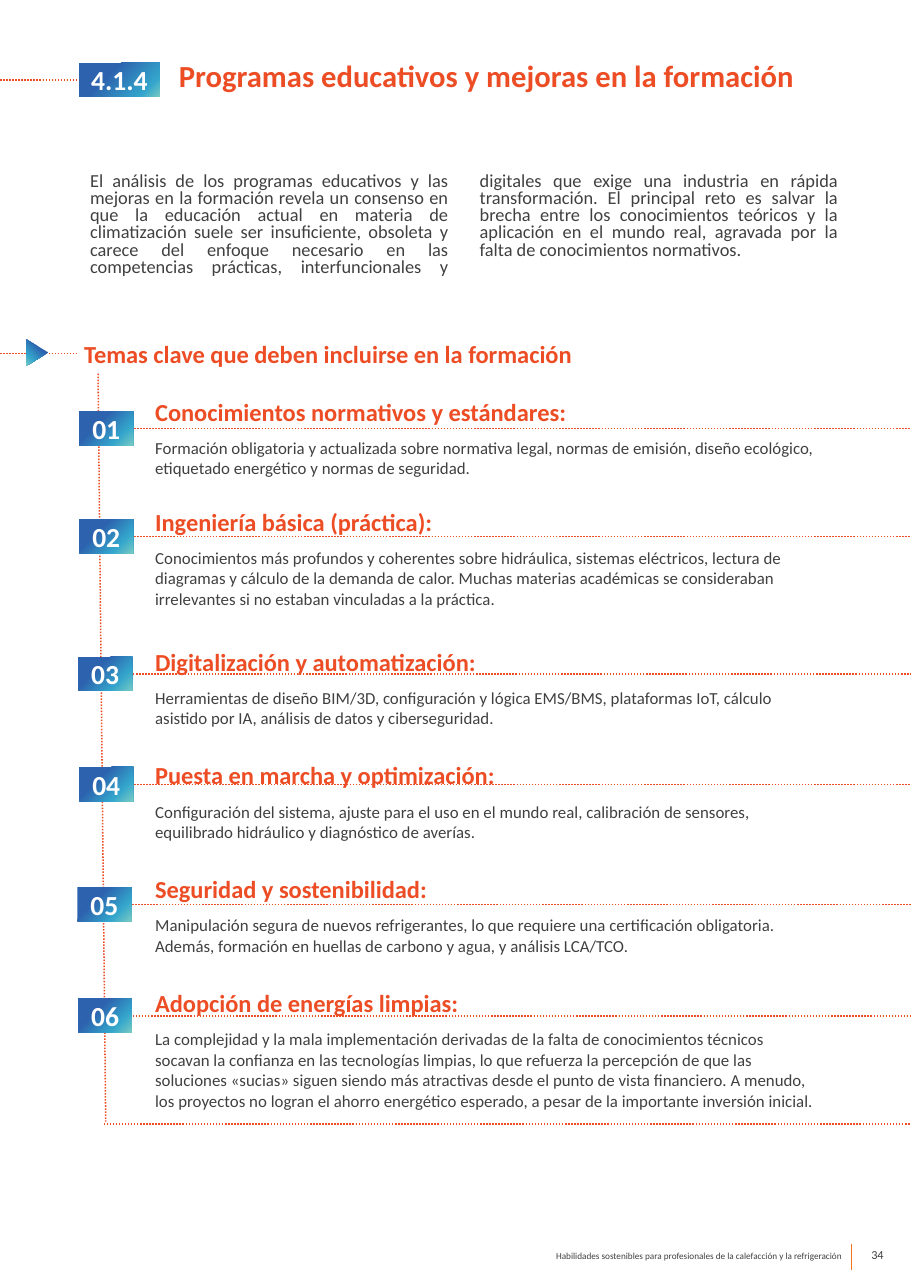
"""Builds the A4 page on training programmes, with six numbered key topics."""
from dataclasses import dataclass

from lxml.etree import SubElement
from pptx import Presentation
from pptx.dml.color import RGBColor
from pptx.enum.dml import MSO_LINE
from pptx.enum.shapes import MSO_CONNECTOR, MSO_SHAPE
from pptx.enum.text import MSO_ANCHOR, PP_ALIGN
from pptx.oxml.ns import qn
from pptx.shapes.autoshape import Shape
from pptx.slide import Slide
from pptx.text.text import TextFrame, _Paragraph
from pptx.util import Pt

PAGE_WIDTH, PAGE_HEIGHT = 595.44, 841.68
FONT = "Calibri"
COLORS = {
    "orange": "ED4D24",
    "footer_rule": "F37321",
    "text": "404040",
    "white": "FFFFFF",
    "blue": "2D62AE",
    "cyan": "33A5CC",
    "aqua": "77CBC4",
}
TOPIC_LINE = 13.4
HEADING_GAP = 7.3
BADGE_HEIGHT = 22.4
BADGE_RULE_OFFSET = 11.4


@dataclass(frozen=True)
class Topic:
    heading: str
    body: str
    rule_y: float
    badge_left: float
    space_before: float


@dataclass(frozen=True)
class Rule:
    start_x: float
    start_y: float
    end_x: float
    end_y: float


@dataclass(frozen=True)
class TextStyle:
    size: float
    color: str
    bold: bool = False
    line_spacing: float | None = None
    align: PP_ALIGN = PP_ALIGN.LEFT


TITLE = TextStyle(20, "orange", True, 21)
SUBTITLE = TextStyle(16, "orange", True, 17)
INTRO = TextStyle(12, "text", False, 11.2, PP_ALIGN.JUSTIFY)
BADGE = TextStyle(18, "white", True, None, PP_ALIGN.CENTER)
HEADING = TextStyle(16, "orange", True, TOPIC_LINE)
BODY = TextStyle(11, "text", False, TOPIC_LINE)
FOOTER = TextStyle(6, "text", align=PP_ALIGN.RIGHT)
PAGE_NUMBER = TextStyle(8, "text", align=PP_ALIGN.RIGHT)

INTRO_TEXT = (
    "El análisis de los programas educativos y las mejoras en la formación revela un "
    "consenso en que la educación actual en materia de climatización suele ser "
    "insuficiente, obsoleta y carece del enfoque necesario en las competencias prácticas, "
    "interfuncionales y digitales que exige una industria en rápida transformación. El "
    "principal reto es salvar la brecha entre los conocimientos teóricos y la aplicación "
    "en el mundo real, agravada por la falta de conocimientos normativos."
)
TOPICS = [
    Topic("Conocimientos normativos y estándares:",
          "Formación obligatoria y actualizada sobre normativa legal, normas de emisión, "
          "diseño ecológico, etiquetado energético y normas de seguridad.",
          280.1, 51.8, 0),
    Topic("Ingeniería básica (práctica):",
          "Conocimientos más profundos y coherentes sobre hidráulica, sistemas eléctricos, "
          "lectura de diagramas y cálculo de la demanda de calor. Muchas materias académicas "
          "se consideraban irrelevantes si no estaban vinculadas a la práctica.",
          350.6, 51.8, 24.4),
    Topic("Digitalización y automatización:",
          "Herramientas de diseño BIM/3D, configuración y lógica EMS/BMS, plataformas IoT, "
          "cálculo asistido por IA, análisis de datos y ciberseguridad.",
          440.6, 51.1, 30.5),
    Topic("Puesta en marcha y optimización:",
          "Configuración del sistema, ajuste para el uso en el mundo real, calibración de "
          "sensores, equilibrado hidráulico y diagnóstico de averías.",
          512.6, 51.8, 26.8),
    Topic("Seguridad y sostenibilidad:",
          "Manipulación segura de nuevos refrigerantes, lo que requiere una certificación "
          "obligatoria. Además, formación en huellas de carbono y agua, y análisis LCA/TCO.",
          591.1, 50.6, 26.8),
    Topic("Adopción de energías limpias:",
          "La complejidad y la mala implementación derivadas de la falta de conocimientos "
          "técnicos socavan la confianza en las tecnologías limpias, lo que refuerza la "
          "percepción de que las soluciones «sucias» siguen siendo más atractivas desde el "
          "punto de vista financiero. A menudo, los proyectos no logran el ahorro energético "
          "esperado, a pesar de la importante inversión inicial.",
          663.8, 51, 26.8),
]
DOTTED_RULES = [
    Rule(0, 52.4, 65.5, 52.4),
    Rule(0, 231, 50.6, 231),
    Rule(64.1, 244.1, 69.1, 733),
    Rule(67.7, 734.4, PAGE_WIDTH, 734.4),
]


def write(paragraph: _Paragraph, text: str, style: TextStyle) -> None:
    paragraph.alignment = style.align
    if style.line_spacing:
        paragraph.line_spacing = Pt(style.line_spacing)
    run = paragraph.add_run()
    run.text = text
    run.font.name = FONT
    run.font.size = Pt(style.size)
    run.font.bold = style.bold
    run.font.color.rgb = RGBColor.from_string(COLORS[style.color])


def add_text_box(slide: Slide, left: float, top: float, width: float,
                 height: float) -> TextFrame:
    shape = slide.shapes.add_textbox(Pt(left), Pt(top), Pt(width), Pt(height))
    shape.text_frame.word_wrap = True
    return shape.text_frame


def add_rule(slide: Slide, rule: Rule, color: str = "orange", width: float = 1,
             dotted: bool = True) -> None:
    connector = slide.shapes.add_connector(
        MSO_CONNECTOR.STRAIGHT, Pt(rule.start_x), Pt(rule.start_y),
        Pt(rule.end_x), Pt(rule.end_y))
    connector.line.color.rgb = RGBColor.from_string(COLORS[color])
    connector.line.width = Pt(width)
    if dotted:
        connector.line.dash_style = MSO_LINE.ROUND_DOT
    SubElement(connector._element.spPr, qn("a:effectLst"))


def add_gradient_shape(slide: Slide, kind: MSO_SHAPE, left: float, top: float,
                       width: float, height: float, middle: int = 74) -> Shape:
    shape = slide.shapes.add_shape(kind, Pt(left), Pt(top), Pt(width), Pt(height))
    shape.shadow.inherit = False
    shape.line.fill.background()
    shape.fill.gradient()
    shape.fill.gradient_angle = 315
    stops = shape._element.spPr.find(qn("a:gradFill")).find(qn("a:gsLst"))
    for stop in list(stops):
        stops.remove(stop)
    for position, color in ((35, "blue"), (middle, "cyan"), (100, "aqua")):
        stop = SubElement(stops, qn("a:gs"), pos=str(position * 1000))
        SubElement(stop, qn("a:srgbClr"), val=COLORS[color])
    return shape


def add_badge(slide: Slide, label: str, left: float, top: float, width: float,
              middle: int = 74) -> None:
    shape = add_gradient_shape(slide, MSO_SHAPE.RECTANGLE, left, top, width,
                               BADGE_HEIGHT, middle)
    frame = shape.text_frame
    frame.word_wrap = False
    frame.vertical_anchor = MSO_ANCHOR.MIDDLE
    write(frame.paragraphs[0], label, BADGE)


def add_topics(slide: Slide) -> None:
    frame = add_text_box(slide, 94.3, 261.4, 447.1, 497.5)
    for number, topic in enumerate(TOPICS, 1):
        heading = frame.paragraphs[0] if number == 1 else frame.add_paragraph()
        write(heading, topic.heading, HEADING)
        heading.space_before = Pt(topic.space_before)
        heading.space_after = Pt(HEADING_GAP)
        write(frame.add_paragraph(), topic.body, BODY)
        add_rule(slide, Rule(topic.badge_left + 12, topic.rule_y, PAGE_WIDTH, topic.rule_y))
        add_badge(slide, f"{number:02}", topic.badge_left,
                  topic.rule_y - BADGE_RULE_OFFSET, 35.3)


def main() -> None:
    presentation = Presentation()
    presentation.slide_width, presentation.slide_height = Pt(PAGE_WIDTH), Pt(PAGE_HEIGHT)
    slide = presentation.slides.add_slide(presentation.slide_layouts[6])

    footer = add_text_box(slide, 174.2, 813.6, 383, 14.4)
    write(footer.paragraphs[0], "Habilidades sostenibles para profesionales de la "
          "calefacción y la refrigeración", FOOTER)
    add_rule(slide, Rule(556.6, 830.2, 556.6, 812.9), "footer_rule", 0.75, False)
    page_number = add_text_box(slide, 557.3, 809.3, 27.4, 21.6)
    page_number.vertical_anchor = MSO_ANCHOR.MIDDLE
    write(page_number.paragraphs[0], "34", PAGE_NUMBER)

    for rule in DOTTED_RULES:
        add_rule(slide, rule)
    title = add_text_box(slide, 109.8, 36.7, 457.2, 49.7)
    write(title.paragraphs[0], "Programas educativos y mejoras en la formación", TITLE)
    add_badge(slide, "4.1.4", 51.8, 41, 52.6, 82)
    subtitle = add_text_box(slide, 47.9, 220.3, 447.1, 24.5)
    write(subtitle.paragraphs[0], "Temas clave que deben incluirse en la formación", SUBTITLE)
    arrow = add_gradient_shape(slide, MSO_SHAPE.ISOSCELES_TRIANGLE, 15.8, 223.2, 17.3, 14.4)
    arrow.rotation = 90

    intro = add_text_box(slide, 51.8, 110.2, 503.3, 67.7)
    intro._txBody.bodyPr.set("numCol", "2")
    intro._txBody.bodyPr.set("spcCol", str(int(Pt(20.2))))
    write(intro.paragraphs[0], INTRO_TEXT, INTRO)
    add_topics(slide)
    presentation.save("out.pptx")


if __name__ == "__main__":
    main()
